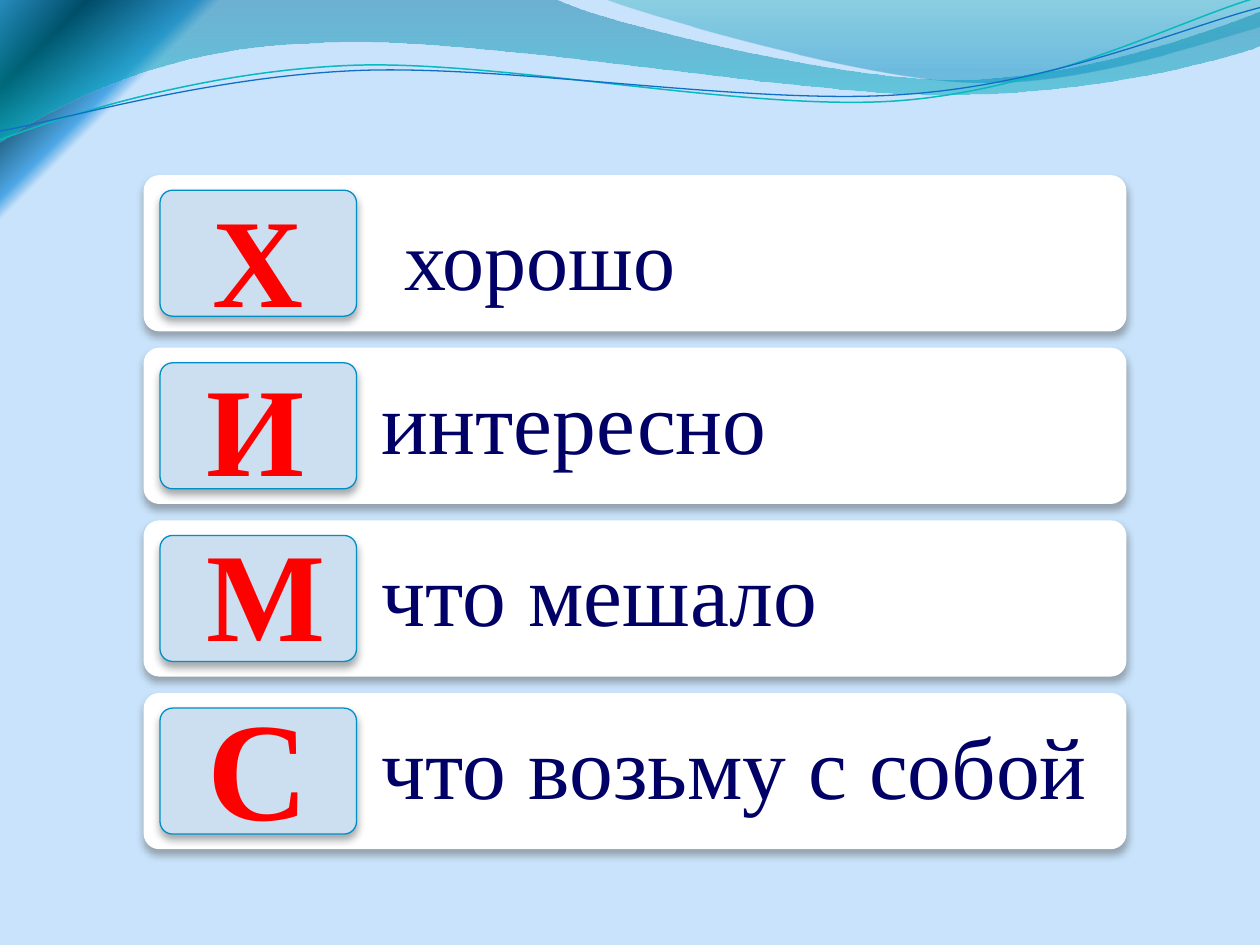
from dataclasses import dataclass
from math import cos, radians, sin
from pptx import Presentation
from pptx.dml.color import RGBColor
from pptx.enum.shapes import MSO_SHAPE
from pptx.enum.text import MSO_ANCHOR, MSO_AUTO_SIZE, PP_ALIGN
from pptx.oxml import parse_xml
from pptx.oxml.ns import nsdecls
from pptx.util import Inches, Pt


@dataclass
class Theme:
    font: str = "Times New Roman"
    word: str = "000066"
    letter: str = "FF0000"
    card: str = "FFFFFF"
    tile: str = "CCDFF1"
    edge: str = "008EC5"
    card_shade: str = "5A5A5A"
    tile_shade: str = "474E55"
    # Gradient stops: position, colour, opacity (all in percent)
    sky: tuple = ((0, "4AA0D6", 100), (4, "002C38", 100),
                  (9, "4DA7E5", 100), (10, "C8E3FB", 100))
    wave: tuple = ((0, "0074A1", 45), (100, "00C6CF", 55))
    crest: tuple = ((0, "00A1A9", 30), (80, "008BBF", 45))
    teal: str = "0AB8BF"
    blue: str = "0F6FC6"
    word_size: int = 50
    first_size: int = 48
    letter_size: int = 72
    last_size: int = 80


theme = Theme()


def set_grad(parent, stops, angle):
    """Replace the solid fill of a parent element with a linear gradient."""
    marks = "".join(
        f'<a:gs pos="{pos * 1000}"><a:srgbClr val="{color}">'
        f'<a:alpha val="{alpha * 1000}"/></a:srgbClr></a:gs>'
        for pos, color, alpha in stops)
    grad = parse_xml(
        f'<a:gradFill {nsdecls("a")} rotWithShape="1"><a:gsLst>{marks}</a:gsLst>'
        f'<a:lin ang="{angle * 60000}" scaled="0"/></a:gradFill>')
    parent.replace(parent.xpath("./a:solidFill")[0], grad)


def add_text(box, text, size, color, bold=False):
    """Write one run in a text box and return its paragraph."""
    box.text_frame.word_wrap = True
    para = box.text_frame.paragraphs[0]
    run = para.add_run()
    run.text = text
    run.font.name = theme.font
    run.font.size = Pt(size)
    run.font.bold = bold
    run.font.color.rgb = RGBColor.from_string(color)
    return para


deck = Presentation()
deck.slide_width, deck.slide_height = Inches(10), Inches(7.5)
slide = deck.slides.add_slide(deck.slide_layouts[6])
shapes = slide.shapes

# Background
slide.background.fill.solid()
set_grad(slide.element.xpath(".//p:bgPr")[0], theme.sky, 45)

# Waves: frame, tilt, start, steps (2 numbers a line, 6 a curve), fill, line
waves = [
    ((-0.01, -0.01, 10.02, 1.14), 0, (0, 0),
     [(4.4, -0.01), (4.76, 0.17, 6.64, 0.63, 7.58, 0.63),
      (8.53, 0.63, 9.58, 0.26, 10, 0.09), (10.01, 0.36),
      (9.83, 0.44, 8.7, 0.76, 7.46, 0.75), (6.22, 0.75, 3.82, 0.28, 2.57, 0.34),
      (1.29, 0.36, 0.46, 0.83, -0.01, 1.13), (0, 0)], theme.wave, None, 0),
    ((4.79, -0.01, 5.21, 0.7), 0, (4.79, -0.01),
     [(5.09, 0.11, 6.82, 0.62, 7.69, 0.65), (8.56, 0.69, 9.61, 0.32, 10, 0.21),
      (10, 0), (4.79, -0.01)], theme.crest, None, 0),
    ((-0.02, 0.22, 10.02, 0.71), -2.7, (0, 1.11),
     [(0.48, 0.93, 1.58, 0.57, 2.77, 0.52), (3.95, 0.47, 5.93, 0.89, 7.13, 0.8),
      (8.33, 0.71, 9.38, 0.15, 9.98, -0.02)], None, theme.teal, 0.85),
    ((-0.02, 0.3, 10.03, 0.58), -2.7, (0, 1.04),
     [(0.47, 0.96, 1.64, 0.61, 2.83, 0.56), (4.03, 0.51, 5.97, 0.84, 7.17, 0.75),
      (8.36, 0.67, 9.41, 0.21, 10, 0.06)], None, theme.blue, 0.75),
]
for (left, top, wide, high), tilt, start, steps, stops, color, width in waves:
    pen = shapes.build_freeform(Inches(start[0]), Inches(start[1]))
    pen.add_line_segments([(Inches(s[-2]), Inches(s[-1])) for s in steps],
                          close=bool(stops))
    curve = pen.convert_to_shape()
    curve.left, curve.top = Inches(left), Inches(top)
    curve.width, curve.height = Inches(wide), Inches(high)
    curve.rotation = tilt

    # Bend the outline, with its points turned back into the untilted frame
    turn, mid_x, mid_y = radians(-tilt), wide / 2, high / 2
    marks = ""
    for step in [start] + steps:
        dots = ""
        for x, y in zip(step[::2], step[1::2]):
            dx, dy = x - left - mid_x, y - top - mid_y
            px = Inches(mid_x + dx * cos(turn) - dy * sin(turn))
            py = Inches(mid_y + dx * sin(turn) + dy * cos(turn))
            dots += f'<a:pt x="{px}" y="{py}"/>'
        kind = "cubicBezTo" if len(step) == 6 else "lnTo" if marks else "moveTo"
        marks += f"<a:{kind}>{dots}</a:{kind}>"
    if stops:
        marks += "<a:close/>"
    old = curve.element.xpath(".//a:path")[0]
    old.getparent().replace(old, parse_xml(
        f'<a:path {nsdecls("a")} w="{Inches(wide)}" h="{Inches(high)}">'
        f'{marks}</a:path>'))

    curve.shadow.inherit = False
    if stops:
        curve.fill.solid()
        set_grad(curve.element.spPr, stops, 90)
        curve.line.fill.background()
    else:
        curve.fill.background()
        curve.line.color.rgb = RGBColor.from_string(color)
        curve.line.width = Pt(width)

# Rows: a white card, the word, and a tile for the letter
words = ["хорошо", "интересно", "что мешало", "что возьму с собой"]
for row, word in enumerate(words):
    y = 1.39 + row * 1.37
    for x, dy, w, h, color, edge, shade in (
            (1.14, 0, 7.8, 1.24, theme.card, None, theme.card_shade),
            (1.27, 0.12, 1.56, 1, theme.tile, theme.edge, theme.tile_shade)):
        # The first word has a box of its own, placed last
        if edge and row > 0:
            label = shapes.add_textbox(Inches(2.82), Inches(y),
                                       Inches(6.11), Inches(1.24))
            frame = label.text_frame
            frame.vertical_anchor = MSO_ANCHOR.MIDDLE
            frame.margin_left = frame.margin_right = Inches(0.21)
            frame.margin_top = frame.margin_bottom = Inches(0.21)
            add_text(label, word, theme.word_size, theme.word).line_spacing = 0.9
        box = shapes.add_shape(MSO_SHAPE.ROUNDED_RECTANGLE, Inches(x),
                               Inches(y + dy), Inches(w), Inches(h))
        box.adjustments[0] = 0.1
        box.fill.solid()
        box.fill.fore_color.rgb = RGBColor.from_string(color)
        if edge:
            box.line.color.rgb = RGBColor.from_string(edge)
            box.line.width = Pt(0.75)
        else:
            box.line.fill.background()
        box.shadow.inherit = False
        box.element.spPr.xpath("./a:effectLst")[0].append(parse_xml(
            f'<a:outerShdw {nsdecls("a")} blurRad="{Pt(4.5)}" dist="{Pt(3)}" '
            f'dir="5400000" rotWithShape="0"><a:srgbClr val="{shade}">'
            f'<a:alpha val="48000"/></a:srgbClr></a:outerShdw>'))

# Letters
for text, y, w, h, size, align in (
        ("Х", 1.39, 1.02, 1.31, theme.letter_size, PP_ALIGN.CENTER),
        ("И", 2.73, 1.18, 1.31, theme.letter_size, PP_ALIGN.LEFT),
        ("М", 4.04, 1.02, 1.31, theme.letter_size, PP_ALIGN.CENTER),
        ("С", 5.35, 1.02, 1.45, theme.last_size, PP_ALIGN.CENTER)):
    mark = shapes.add_textbox(Inches(1.54), Inches(y), Inches(w), Inches(h))
    mark.text_frame.auto_size = MSO_AUTO_SIZE.SHAPE_TO_FIT_TEXT
    add_text(mark, text, size, theme.letter, bold=True).alignment = align

# First word
first = shapes.add_textbox(Inches(3.11), Inches(1.59), Inches(3.94), Inches(0.91))
first.text_frame.auto_size = MSO_AUTO_SIZE.SHAPE_TO_FIT_TEXT
add_text(first, words[0], theme.first_size, theme.word)

deck.save("out.pptx")
